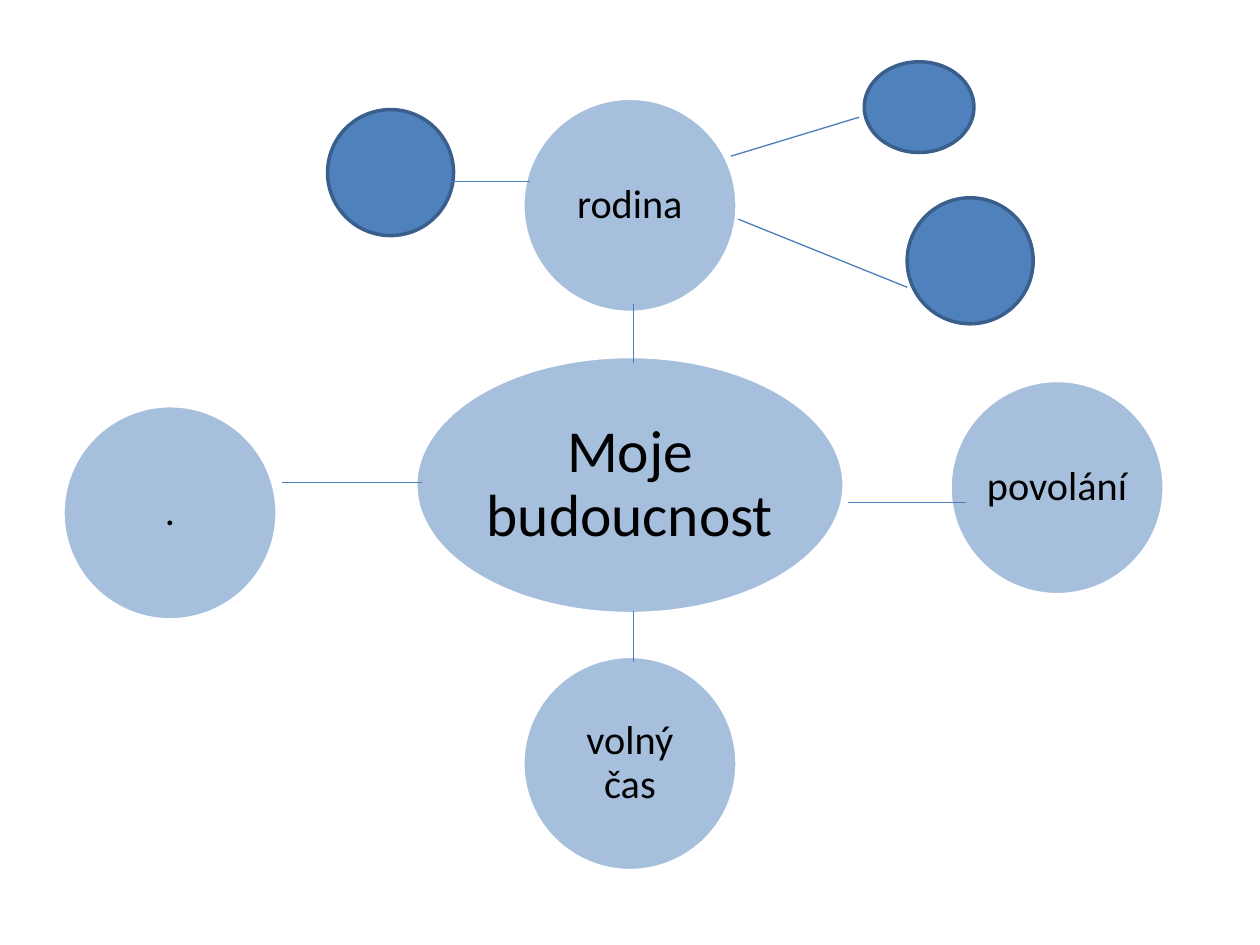
"""Build a mind map slide about plans for the future."""
from dataclasses import dataclass

from lxml import etree
from pptx import Presentation
from pptx.dml.color import RGBColor
from pptx.enum.shapes import MSO_CONNECTOR, MSO_SHAPE
from pptx.enum.text import MSO_ANCHOR, PP_ALIGN
from pptx.oxml.ns import qn
from pptx.shapes.autoshape import Shape
from pptx.slide import Slide
from pptx.util import Inches, Pt

OVAL = MSO_SHAPE.OVAL
STRAIGHT = MSO_CONNECTOR.STRAIGHT
MIDDLE = MSO_ANCHOR.MIDDLE
CENTER = PP_ALIGN.CENTER
BLANK_LAYOUT = 6


@dataclass(frozen=True)
class Theme:
    font: str = "Calibri"
    text: RGBColor = RGBColor(0x00, 0x00, 0x00)
    bubble: RGBColor = RGBColor(0x4F, 0x81, 0xBD)
    topic_outline: RGBColor = RGBColor(0xFF, 0xFF, 0xFF)
    detail_outline: RGBColor = RGBColor(0x3A, 0x5F, 0x8C)
    link: RGBColor = RGBColor(0x4B, 0x7E, 0xBC)
    topic_opacity: int = 50
    center_size: int = 34
    branch_size: int = 23
    outline_width: float = 2
    link_width: float = 0.75


@dataclass(frozen=True)
class Bubble:
    left: float
    top: float
    width: float = 1.0
    height: float = 1.0


@dataclass(frozen=True)
class Topic:
    label: str
    bubble: Bubble
    size: int
    inset: float = 0.03


@dataclass(frozen=True)
class Link:
    x1: float
    y1: float
    x2: float
    y2: float


THEME = Theme()


def branch(label: str, left: float, top: float) -> Topic:
    """Return a round topic of the common branch size."""
    return Topic(label, Bubble(left, top, 1.7, 1.7), THEME.branch_size)


TOPICS = (
    Topic("Moje budoucnost", Bubble(3.3, 2.83, 3.4, 2.04), THEME.center_size, 0.05),
    branch("rodina", 4.15, 0.78),
    branch("povolání", 7.54, 3.02),
    branch("volný čas", 4.15, 5.21),
    branch(".", 0.5, 3.22),
)
DETAILS = (
    Bubble(2.6, 0.87),
    Bubble(7.2, 1.57),
    Bubble(6.86, 0.49, 0.87, 0.72),
)
LINKS = (
    Link(4.21, 1.44, 3.58, 1.44),
    Link(5.03, 2.88, 5.03, 2.41),
    Link(6.73, 3.99, 7.67, 3.99),
    Link(5.03, 4.85, 5.03, 5.25),
    Link(3.35, 3.83, 2.24, 3.83),
    Link(5.86, 1.74, 7.2, 2.28),
    Link(5.8, 1.24, 6.82, 0.93),
)


def draw_bubble(slide: Slide, bubble: Bubble, outline: RGBColor, opacity: int = 100) -> Shape:
    """Draw one oval with the given outline and fill opacity in percent."""
    oval = slide.shapes.add_shape(
        OVAL, Inches(bubble.left), Inches(bubble.top), Inches(bubble.width), Inches(bubble.height)
    )
    oval.shadow.inherit = False
    oval.fill.solid()
    oval.fill.fore_color.rgb = THEME.bubble
    oval.line.color.rgb = outline
    oval.line.width = Pt(THEME.outline_width)
    if opacity < 100:
        color = oval.fill._xPr.find(qn("a:solidFill"))[0]
        etree.SubElement(color, qn("a:alpha"), val=str(opacity * 1000))
    return oval


def write_text(oval: Shape, text: str, *, size: int, inset: float) -> None:
    """Write centred text into an oval."""
    frame = oval.text_frame
    frame.word_wrap = True
    frame.vertical_anchor = MIDDLE
    frame.margin_left = frame.margin_right = Inches(inset)
    frame.margin_top = frame.margin_bottom = Inches(inset)
    paragraph = frame.paragraphs[0]
    paragraph.alignment = CENTER
    paragraph.line_spacing = 0.9
    run = paragraph.add_run()
    run.text = text
    run.font.name = THEME.font
    run.font.size = Pt(size)
    run.font.color.rgb = THEME.text


def draw_topic(slide: Slide, topic: Topic) -> None:
    """Draw one labelled translucent bubble."""
    oval = draw_bubble(slide, topic.bubble, THEME.topic_outline, THEME.topic_opacity)
    write_text(oval, topic.label, size=topic.size, inset=topic.inset)


def draw_link(slide: Slide, link: Link) -> None:
    """Draw one thin line between two bubbles."""
    connector = slide.shapes.add_connector(
        STRAIGHT, Inches(link.x1), Inches(link.y1), Inches(link.x2), Inches(link.y2)
    )
    connector.line.color.rgb = THEME.link
    connector.line.width = Pt(THEME.link_width)
    etree.SubElement(connector._element.spPr, qn("a:effectLst"))


def main() -> None:
    """Build and save the slide."""
    presentation = Presentation()
    presentation.slide_width = Inches(10)
    presentation.slide_height = Inches(7.5)
    slide = presentation.slides.add_slide(presentation.slide_layouts[BLANK_LAYOUT])
    for topic in TOPICS:
        draw_topic(slide, topic)
    for detail in DETAILS:
        draw_bubble(slide, detail, THEME.detail_outline)
    for link in LINKS:
        draw_link(slide, link)
    presentation.save("out.pptx")


if __name__ == "__main__":
    main()
